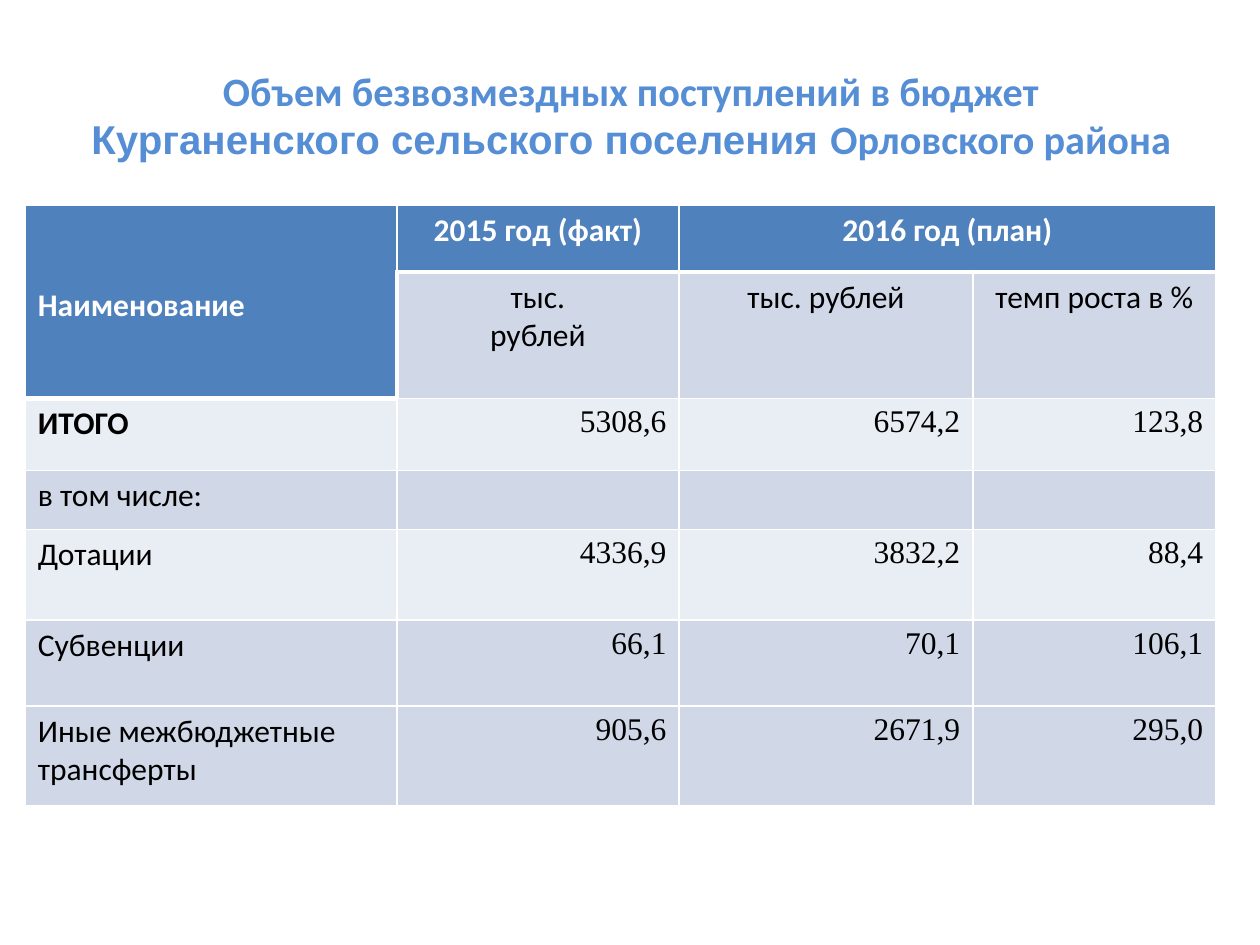
from lxml import etree
from pptx import Presentation
from pptx.dml.color import RGBColor
from pptx.enum.text import MSO_ANCHOR, PP_ALIGN
from pptx.oxml.ns import qn
from pptx.util import Cm, Pt

LEFT, CENTER, RIGHT = PP_ALIGN.LEFT, PP_ALIGN.CENTER, PP_ALIGN.RIGHT
MIDDLE = MSO_ANCHOR.MIDDLE

TITLE_BLUE = RGBColor(0x55, 0x8E, 0xD5)
HEADER_BLUE = RGBColor(0x4F, 0x81, 0xBD)
DARK_BAND = RGBColor(0xD0, 0xD8, 0xE8)
LIGHT_BAND = RGBColor(0xE9, 0xED, 0xF4)
WHITE = RGBColor(0xFF, 0xFF, 0xFF)
BLACK = RGBColor(0, 0, 0)

TITLE_PARTS = [
    ("Объем безвозмездных поступлений в бюджет ", "Calibri"),
    ("Курганенского сельского поселения ", "Arial"),
    ("Орловского района", "Calibri"),
]
HEADER = ["Наименование", "2015 год (факт)", "2016 год (план)", ""]
SUBHEADER = ["", "тыс.\nрублей", "тыс. рублей", "темп роста в %"]
INCOME = [
    (["ИТОГО", "5308,6", "6574,2", "123,8"], LIGHT_BAND),
    (["в том числе:", "", "", ""], DARK_BAND),
    (["Дотации", "4336,9", "3832,2", "88,4"], LIGHT_BAND),
    (["Субвенции", "66,1", "70,1", "106,1"], DARK_BAND),
    (["Иные межбюджетные трансферты", "905,6", "2671,9", "295,0"], DARK_BAND),
]
COLUMN_WIDTHS = [7.49, 5.69, 5.92, 4.9]
ROW_HEIGHTS = [1.35, 2.08, 1.45, 1.19, 1.83, 1.73, 2.01]


def add_title(slide):
    title = slide.shapes.title
    title.left, title.top, title.width, title.height = Cm(1.3), Cm(0.91), Cm(22.86), Cm(2.79)
    title.text_frame.vertical_anchor = MIDDLE
    paragraph = title.text_frame.paragraphs[0]
    paragraph.alignment = CENTER
    paragraph.font.size = Pt(23)
    paragraph.font.bold = True
    paragraph.font.color.rgb = TITLE_BLUE
    for words, font_name in TITLE_PARTS:
        run = paragraph.add_run()
        run.text = words
        run.font.name = font_name


def set_borders(cell, thick_sides):
    """Draw white borders, 3 pt on thick_sides (letters of LRTB) and 1 pt elsewhere."""
    properties = cell._tc.get_or_add_tcPr()
    for side in "LRTB":
        width = Pt(3 if side in thick_sides else 1)
        line = etree.SubElement(properties, qn(f"a:ln{side}"), w=str(width))
        fill = etree.SubElement(line, qn("a:solidFill"))
        etree.SubElement(fill, qn("a:srgbClr"), val=str(WHITE))


def thick_sides(row, column):
    """Sides of a cell that lie on the edge of the blue header area."""
    sides = ""
    if (row == 0 and column > 0) or (row == 1 and column == 0):
        sides += "B"
    if (row == 1 and column > 0) or (row == 2 and column == 0):
        sides += "T"
    if row == 1:
        sides += {0: "R", 1: "L"}.get(column, "")
    return sides


def fill_cell(cell, words, band, alignment, font_name="Calibri", color=BLACK, bold=False):
    cell.fill.solid()
    cell.fill.fore_color.rgb = band
    cell.text = words
    for paragraph in cell.text_frame.paragraphs:
        paragraph.alignment = alignment
        paragraph.font.size = Pt(18)
        paragraph.font.name = font_name
        paragraph.font.bold = bold
        paragraph.font.color.rgb = color


def add_income_table(slide):
    frame = slide.shapes.add_table(
        len(ROW_HEIGHTS), len(COLUMN_WIDTHS), Cm(0.51), Cm(4.13),
        Cm(sum(COLUMN_WIDTHS)), Cm(sum(ROW_HEIGHTS)))
    table = frame.table
    table.first_row = table.horz_banding = False
    for column, width in zip(table.columns, COLUMN_WIDTHS):
        column.width = Cm(width)
    for row, height in zip(table.rows, ROW_HEIGHTS):
        row.height = Cm(height)

    for row in range(len(ROW_HEIGHTS)):
        for column in range(len(COLUMN_WIDTHS)):
            set_borders(table.cell(row, column), thick_sides(row, column))

    for column, words in enumerate(HEADER):
        fill_cell(table.cell(0, column), words, HEADER_BLUE,
                  CENTER if column else LEFT, color=WHITE, bold=True)
    for column, words in enumerate(SUBHEADER):
        fill_cell(table.cell(1, column), words, DARK_BAND if column else HEADER_BLUE, CENTER)
    for row, (texts, band) in enumerate(INCOME, start=2):
        name, *amounts = texts
        fill_cell(table.cell(row, 0), name, band, LEFT, bold=row == 2)
        for column, amount in enumerate(amounts, start=1):
            fill_cell(table.cell(row, column), amount, band, RIGHT, "Times New Roman")

    name_header = table.cell(0, 0)
    name_header.merge(table.cell(1, 0))
    name_header.margin_top = Cm(1.65)
    table.cell(0, 2).merge(table.cell(0, 3))


def main():
    presentation = Presentation()
    presentation.slide_width, presentation.slide_height = Cm(25.4), Cm(19.05)
    slide = presentation.slides.add_slide(presentation.slide_layouts[5])
    add_title(slide)
    add_income_table(slide)
    presentation.save("out.pptx")


if __name__ == "__main__":
    main()
